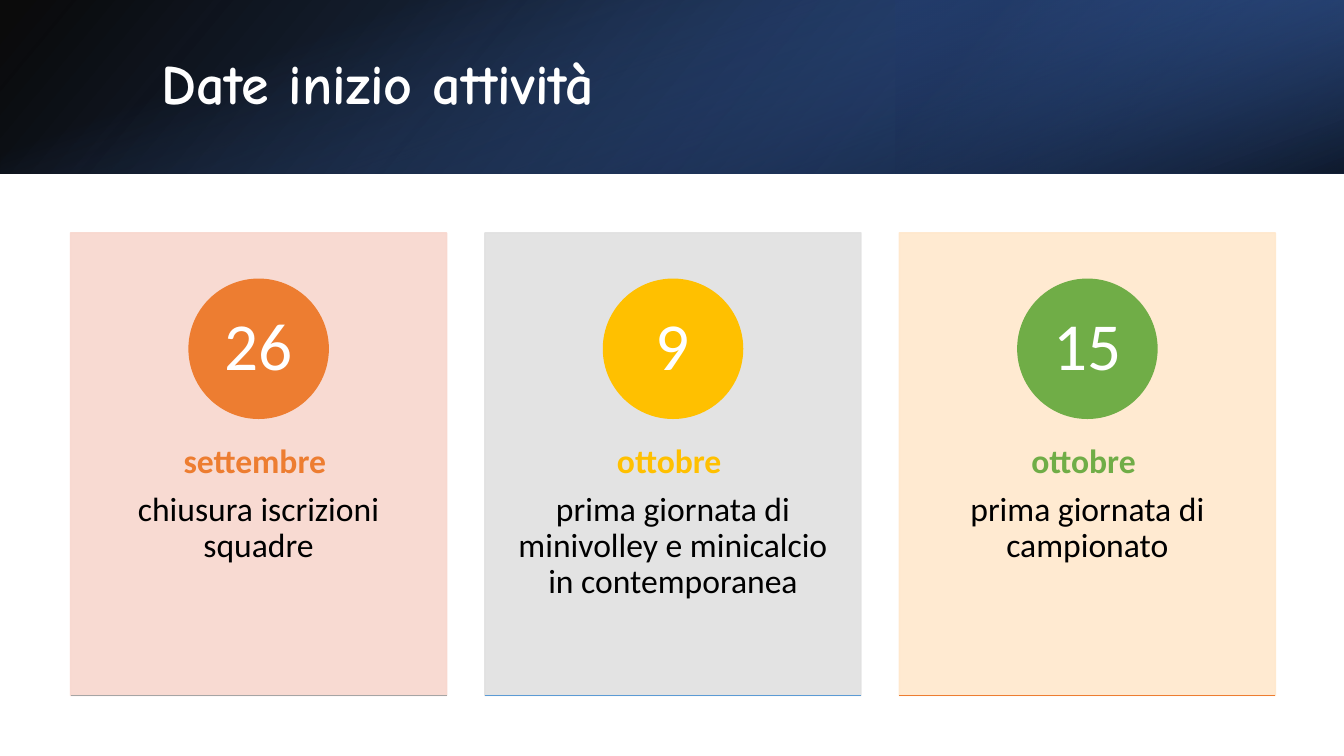
"""Build the slide with the start dates of the season."""
from dataclasses import dataclass

from lxml.etree import SubElement
from pptx import Presentation
from pptx.dml.color import RGBColor as Rgb
from pptx.enum.shapes import MSO_CONNECTOR as Link, MSO_SHAPE as Kind
from pptx.enum.text import MSO_ANCHOR as Anchor, PP_ALIGN as Align
from pptx.oxml.ns import qn
from pptx.shapes.autoshape import Shape
from pptx.shapes.shapetree import SlideShapes as Shapes
from pptx.text.text import TextFrame
from pptx.util import Inches, Pt


@dataclass(frozen=True)
class Theme:
    white: str = "FFFFFF"
    black: str = "000000"
    orange: str = "ED7D31"
    gold: str = "FFC000"
    green: str = "70AD47"
    gray: str = "A5A5A5"
    sky: str = "5B9BD5"
    blue: str = "4472C4"
    royal: str = "2F5597"
    navy: str = "203864"
    rose: str = "F8D7CE"
    silver: str = "E1E1E1"
    peach: str = "FFE8CC"
    head: str = "Comic Neue"
    body: str = "Calibri"
    title: int = 40
    day: int = 48
    text: int = 24


@dataclass(frozen=True)
class Box:
    left: float
    top: float
    width: float
    height: float

    def size(self) -> list[int]:
        return [Inches(v) for v in (self.left, self.top, self.width, self.height)]


@dataclass(frozen=True)
class Stop:
    place: float
    color: str
    alpha: int


@dataclass(frozen=True)
class Band:
    box: Box
    stops: tuple[Stop, Stop]
    angle: int
    turn: int = 0
    flip: bool = False


@dataclass(frozen=True)
class Card:
    day: str
    month: str
    event: str
    tint: str
    color: str
    rule: str


THEME = Theme()
WIDE, HIGH, BAR = 13.33, 7.5, 1.72
LEFT, TOP, STEP = 0.7, 2.31, 4.11
CARD_W, CARD_H, DISC = 3.73, 4.59, 1.38

BANDS = (
    Band(Box(0, 0, WIDE, BAR),
         (Stop(0, THEME.black, 96), Stop(1, THEME.royal, 100)), 140, flip=True),
    Band(Box(WIDE * 2 / 3, 0, WIDE / 3, BAR),
         (Stop(0.19, THEME.navy, 68), Stop(1, THEME.blue, 79)), 320, 180, True),
    Band(Box((WIDE - BAR) / 2, (BAR - WIDE) / 2, BAR, WIDE),
         (Stop(0.23, THEME.blue, 0), Stop(0.99, THEME.black, 74)), 340, 90),
)
CARDS = (
    Card("26", "settembre ", "chiusura iscrizioni squadre",
         THEME.rose, THEME.orange, THEME.gray),
    Card("9", "ottobre ", "prima giornata di minivolley e minicalcio in contemporanea",
         THEME.silver, THEME.gold, THEME.sky),
    Card("15", "ottobre ", "prima giornata di campionato",
         THEME.peach, THEME.green, THEME.orange),
)


def rgb(color: str) -> Rgb:
    return Rgb.from_string(color)


def fade(shape: Shape, *alphas: int) -> None:
    for node, alpha in zip(shape.element.spPr.iter(qn("a:srgbClr")), alphas):
        SubElement(node, qn("a:alpha")).set("val", str(alpha * 1000))


def draw_band(shapes: Shapes, band: Band) -> None:
    shape = shapes.add_shape(Kind.RECTANGLE, *band.box.size())
    shape.shadow.inherit = False
    shape.line.fill.background()
    shape.rotation = band.turn
    if band.flip:
        shape.element.spPr.xfrm.set("flipH", "1")
    shape.fill.gradient()
    shape.fill.gradient_angle = 360 - band.angle
    for mark, stop in zip(shape.fill.gradient_stops, band.stops):
        mark.position = stop.place
        mark.color.rgb = rgb(stop.color)
    fade(shape, *(stop.alpha for stop in band.stops))


def draw_shape(shapes: Shapes, kind: Kind, box: Box, color: str) -> Shape:
    shape = shapes.add_shape(kind, *box.size())
    shape.shadow.inherit = False
    shape.fill.solid()
    shape.fill.fore_color.rgb = rgb(color)
    shape.line.color.rgb = rgb(color)
    shape.line.width = Pt(1)
    return shape


def set_frame(frame: TextFrame, anchor: Anchor, side: float, edge: float) -> None:
    frame.word_wrap = True
    frame.vertical_anchor = anchor
    frame.margin_left = frame.margin_right = Inches(side)
    frame.margin_top = frame.margin_bottom = Inches(edge)


def add_line(frame: TextFrame, text: str, size: int, color: str, bold: bool = False,
             face: str = THEME.body, align: Align = Align.CENTER,
             first: bool = True, after: int = 0) -> None:
    para = frame.paragraphs[0] if first else frame.add_paragraph()
    para.alignment = align
    para.line_spacing = 0.9
    para.space_after = Pt(after)
    run = para.add_run()
    run.text = text
    run.font.name = face
    run.font.size = Pt(size)
    run.font.bold = bold
    run.font.color.rgb = rgb(color)


def draw_title(shapes: Shapes, text: str) -> None:
    frame = shapes.add_textbox(*Box(1.5, 0.38, 10.98, 0.96).size()).text_frame
    set_frame(frame, Anchor.MIDDLE, 0.1, 0.05)
    add_line(frame, text, THEME.title, THEME.white, True, THEME.head, Align.LEFT)


def draw_card(shapes: Shapes, card: Card, left: float) -> None:
    panel = draw_shape(shapes, Kind.RECTANGLE, Box(left, TOP, CARD_W, CARD_H), card.tint)
    fade(panel, 90, 90)

    frame = shapes.add_textbox(*Box(left, 4.05, CARD_W, 2.75).size()).text_frame
    set_frame(frame, Anchor.TOP, 0.29, 0.36)
    add_line(frame, card.month, THEME.text, card.color, True, after=8)
    add_line(frame, card.event, THEME.text, THEME.black, first=False)

    spot = Box(left + (CARD_W - DISC) / 2, 2.77, DISC, DISC)
    disc = draw_shape(shapes, Kind.OVAL, spot, card.color)
    set_frame(disc.text_frame, Anchor.MIDDLE, 0.11, 0.01)
    add_line(disc.text_frame, card.day, THEME.day, THEME.white)

    base = Inches(TOP + CARD_H)
    rule = shapes.add_connector(Link.STRAIGHT, Inches(left), base,
                                Inches(left + CARD_W), base)
    rule.line.color.rgb = rgb(card.rule)
    rule.line.width = Pt(1)
    SubElement(rule.element.spPr, qn("a:effectLst"))


def main() -> None:
    deck = Presentation()
    deck.slide_width, deck.slide_height = Inches(WIDE), Inches(HIGH)
    shapes = deck.slides.add_slide(deck.slide_layouts[6]).shapes
    for band in BANDS:
        draw_band(shapes, band)
    draw_title(shapes, "Date inizio attività")
    for col, card in enumerate(CARDS):
        draw_card(shapes, card, LEFT + col * STEP)
    deck.save("out.pptx")


if __name__ == "__main__":
    main()
